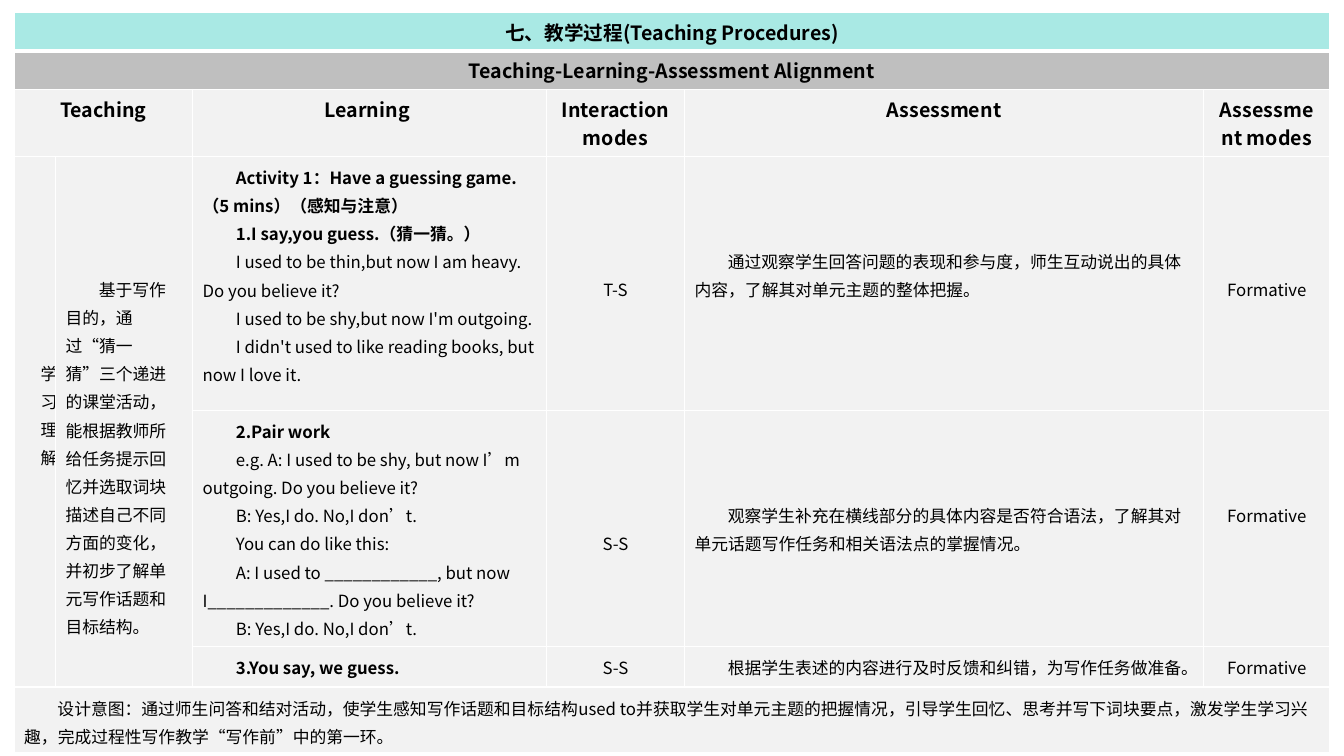
from lxml.etree import SubElement
from pptx import Presentation
from pptx.dml.color import RGBColor
from pptx.enum.text import PP_ALIGN as Align
from pptx.oxml.ns import qn
from pptx.util import Inches, Pt

FONT = "Noto Sans CJK SC"
COLORS = {"title": "A9E9E4", "band": "BFBFBF", "body": "F2F2F2",
          "border": "FFFFFF", "text": "000000"}
COLUMNS = [0.41, 1.36, 3.51, 1.37, 5.15, 1.25]
ROWS = [0.33, 0.36, 0.53, 2.52, 2.34, 0.4, 0.6]
TABLE_LEFT, TABLE_TOP = 0.14, 0.12
MARGIN = 0.05
LINE = 20  # points of leading in the body
INDENT = 0.33

# (row, column, row span, column span, text)
HEADINGS = [
    (0, 0, 1, 6, "七、教学过程(Teaching Procedures)"),
    (1, 0, 1, 6, "Teaching-Learning-Assessment Alignment"),
    (2, 0, 1, 2, "Teaching"),
    (2, 2, 1, 1, "Learning "),
    (2, 3, 1, 1, "Interaction modes"),
    (2, 4, 1, 1, "Assessment"),
    (2, 5, 1, 1, "Assessment modes"),
]

# (row, column, row span, column span, lines left free above, bold paragraphs, paragraphs)
BODY = [
    (3, 0, 3, 1, 7, 0, ["学", "习", "理", "解"]),
    (3, 1, 3, 1, 4, 0, [
        "基于写作目的，通过“猜一猜”三个递进的课堂活动，能根据教师所给任务提示"
        "回忆并选取词块描述自己不同方面的变化，并初步了解单元写作话题和目标结构。"]),
    (3, 2, 1, 1, 0, 2, [
        "Activity 1：Have a guessing game.（5 mins）（感知与注意）",
        "1.I say,you guess.（猜一猜。）",
        "I used to be thin,but now I am heavy. Do you believe it?",
        "I used to be shy,but now I'm outgoing.",
        "I didn't used to like reading books, but now I love it."]),
    (3, 3, 1, 1, 4, 0, ["T-S"]),
    (3, 4, 1, 1, 3, 0, [
        "通过观察学生回答问题的表现和参与度，师生互动说出的具体内容，了解其对单元主题的整体把握。"]),
    (3, 5, 1, 1, 4, 0, ["Formative"]),
    (4, 2, 1, 1, 0, 1, [
        "2.Pair work",
        "e.g. A: I used to be shy, but now I’m outgoing. Do you believe it?",
        "B: Yes,I do. No,I don’t.",
        "You can do like this:",
        "A: I used to ____________, but now I_____________. Do you believe it?",
        "B: Yes,I do. No,I don’t."]),
    (4, 3, 1, 1, 4, 0, ["S-S"]),
    (4, 4, 1, 1, 3, 0, [
        "观察学生补充在横线部分的具体内容是否符合语法，了解其对单元话题写作任务和相关语法点的掌握情况。"]),
    (4, 5, 1, 1, 3, 0, ["Formative"]),
    (5, 2, 1, 1, 0, 1, ["3.You say, we guess."]),
    (5, 3, 1, 1, 0, 0, ["S-S"]),
    (5, 4, 1, 1, 0, 0, ["根据学生表述的内容进行及时反馈和纠错，为写作任务做准备。"]),
    (5, 5, 1, 1, 0, 0, ["Formative"]),
    (6, 0, 1, 6, 0, 0, [
        "设计意图：通过师生问答和结对活动，使学生感知写作话题和目标结构used to"
        "并获取学生对单元主题的把握情况，引导学生回忆、思考并写下词块要点，"
        "激发学生学习兴趣，完成过程性写作教学“写作前”中的第一环。"]),
]
COLUMN_ALIGN = {0: Align.RIGHT, 3: Align.CENTER, 5: Align.CENTER}


def write(paragraph, text, size=12, bold=False, align=Align.LEFT, indent=0, leading=None):
    paragraph.alignment = align
    if leading:
        paragraph.line_spacing = Pt(leading)
    if indent:
        properties = paragraph._p.get_or_add_pPr()
        properties.set("marL", "0")
        properties.set("indent", str(Inches(indent)))
    run = paragraph.add_run()
    run.text = text
    font = run.font
    font.size, font.bold, font.name = Pt(size), bold, FONT
    font.color.rgb = RGBColor.from_string(COLORS["text"])
    SubElement(font._element, qn("a:ea")).set("typeface", FONT)


def style_cell(cell, row):
    """Fill the cell and draw its four borders, thicker under the title row."""
    cell.fill.solid()
    fill_name = {0: "title", 1: "band"}.get(row, "body")
    cell.fill.fore_color.rgb = RGBColor.from_string(COLORS[fill_name])
    properties = cell._tc.get_or_add_tcPr()
    for position, side in enumerate(["lnL", "lnR", "lnT", "lnB"]):
        thick = (row, side) in [(0, "lnB"), (1, "lnT")]
        line = SubElement(properties, qn(f"a:{side}"), w=str(Pt(3 if thick else 1)))
        fill = SubElement(line, qn("a:solidFill"))
        SubElement(fill, qn("a:srgbClr"), val=COLORS["border"])
        properties.insert(position, line)


def merged_cell(table, row, column, row_span, column_span):
    cell = table.cell(row, column)
    if row_span * column_span > 1:
        cell.merge(table.cell(row + row_span - 1, column + column_span - 1))
    return cell


def main():
    presentation = Presentation()
    presentation.slide_width, presentation.slide_height = Inches(13.33), Inches(7.5)
    slide = presentation.slides.add_slide(presentation.slide_layouts[6])
    table = slide.shapes.add_table(
        len(ROWS), len(COLUMNS), Inches(TABLE_LEFT), Inches(TABLE_TOP),
        Inches(sum(COLUMNS)), Inches(sum(ROWS))).table
    for column, width in zip(table.columns, COLUMNS):
        column.width = Inches(width)
    for index, height in enumerate(ROWS):
        table.rows[index].height = Inches(height)
        for cell in table.rows[index].cells:
            style_cell(cell, index)

    for *place, text in HEADINGS:
        cell = merged_cell(table, *place)
        write(cell.text_frame.paragraphs[0], text, size=14, bold=True, align=Align.CENTER)

    for *place, free_lines, bold_count, texts in BODY:
        cell = merged_cell(table, *place)
        cell.margin_top = Inches(MARGIN) + Pt(LINE * free_lines)
        column, column_span = place[1], place[3]
        align = COLUMN_ALIGN.get(column, Align.LEFT) if column_span == 1 else Align.LEFT
        indent = 0 if align == Align.CENTER else INDENT
        frame = cell.text_frame
        for index, text in enumerate(texts):
            paragraph = frame.add_paragraph() if index else frame.paragraphs[0]
            write(paragraph, text, bold=index < bold_count, align=align,
                  indent=indent, leading=LINE)

    presentation.save("out.pptx")


if __name__ == "__main__":
    main()
